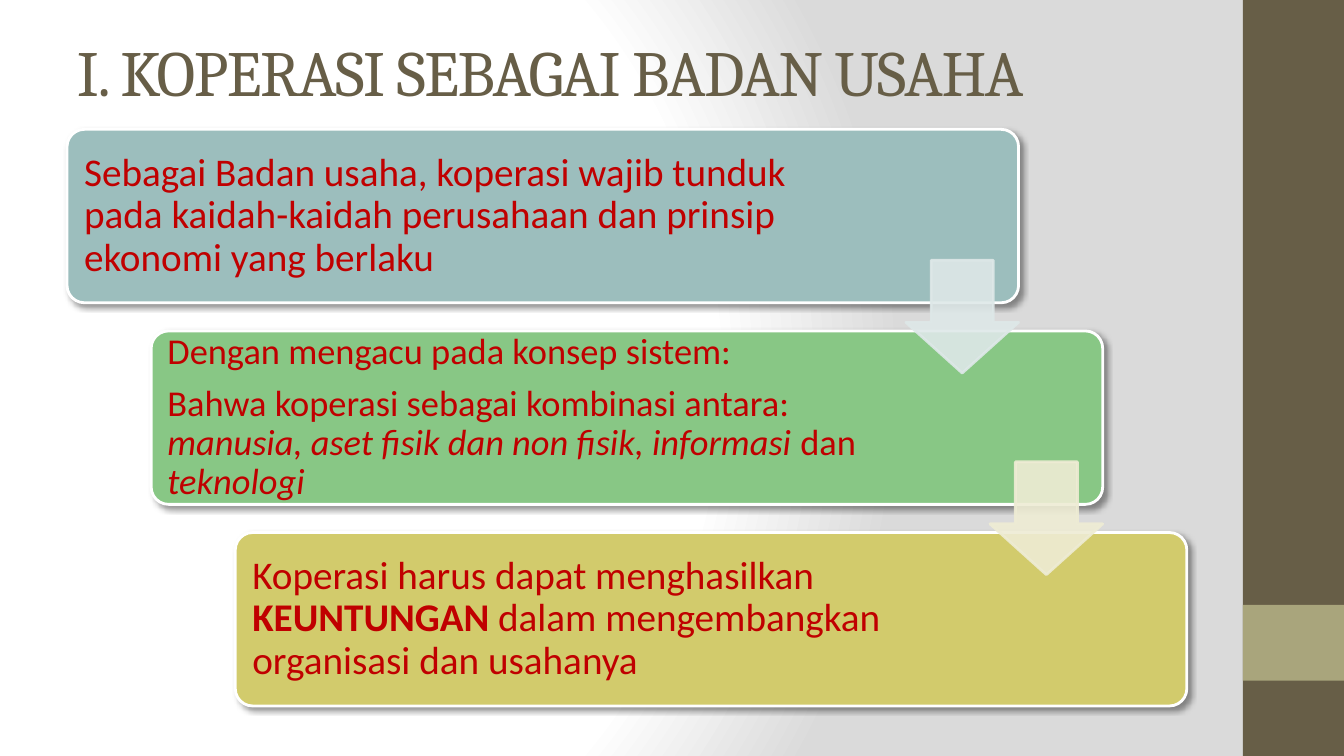
from dataclasses import dataclass

from pptx import Presentation
from pptx.dml.color import RGBColor
from pptx.enum.shapes import MSO_SHAPE as Shape
from pptx.enum.text import MSO_ANCHOR as Anchor
from pptx.enum.text import PP_ALIGN as Align
from pptx.oxml import parse_xml
from pptx.oxml.ns import nsdecls, qn
from pptx.util import Cm, Pt

SLIDE_W, SLIDE_H = 33.87, 19.05
BAR_X, BAR_W = 31.32, 2.55
CARD_X, CARD_Y, CARD_W, CARD_H = 1.69, 3.26, 23.98, 4.37
STEP_X, STEP_Y = 2.12, 5.08
TEXT_GAP = 0.13
ARROW_SIZE, ARROW_DROP = 2.84, 3.3
BROWN, KHAKI, RED, WHITE = "675E47", "A9A57C", "C00000", "FFFFFF"


@dataclass
class Run:
    text: str
    bold: bool = False
    italic: bool = False


@dataclass
class Card:
    fill: str
    size: int
    text_w: float
    inset: float
    paragraphs: list[list[Run]]


CARDS = [
    Card("9CBEBD", 28, 19.28, 0.3, [
        [Run("Sebagai Badan usaha, koperasi wajib tunduk pada kaidah-kaidah "
             "perusahaan dan prinsip ekonomi yang berlaku")],
    ]),
    Card("88C785", 26, 18.8, 0.28, [
        [Run("Dengan mengacu pada konsep sistem:")],
        [Run("Bahwa koperasi sebagai kombinasi antara: "),
         Run("manusia, aset fisik dan non fisik, informasi ", italic=True),
         Run("dan "),
         Run("teknologi", italic=True)],
    ]),
    Card("D2CB6C", 28, 18.8, 0.3, [
        [Run("Koperasi harus dapat menghasilkan "),
         Run("KEUNTUNGAN", bold=True),
         Run(" dalam mengembangkan organisasi dan usahanya")],
    ]),
]
ARROW_FILLS = ["DEE8E8", "EEECD4"]


def rgb(value: str) -> RGBColor:
    return RGBColor.from_string(value)


def add_background(s) -> None:
    s.background.fill.solid()
    bg = s.element.find(".//" + qn("p:bgPr"))
    stops = "".join(
        f'<a:gs pos="{pos}000"><a:srgbClr val="{color}"/></a:gs>'
        for pos, color in [(0, WHITE), (75, WHITE), (100, "DADADA")])
    bg.replace(bg[0], parse_xml(
        f'<a:gradFill {nsdecls("a")} rotWithShape="1"><a:gsLst>{stops}</a:gsLst>'
        '<a:path path="circle"><a:fillToRect l="20000" t="50000" r="100000" '
        'b="50000"/></a:path></a:gradFill>'))


def add_block(s, kind: Shape, x: float, y: float, w: float, h: float,
              fill: str, line: str | None = None):
    sp = s.shapes.add_shape(kind, Cm(x), Cm(y), Cm(w), Cm(h))
    sp.shadow.inherit = False
    sp.fill.solid()
    sp.fill.fore_color.rgb = rgb(fill)
    if line:
        sp.line.color.rgb = rgb(line)
        sp.line.width = Pt(2)
    else:
        sp.line.fill.background()
    return sp


def add_text(s, x: float, y: float, w: float, h: float):
    tf = s.shapes.add_textbox(Cm(x), Cm(y), Cm(w), Cm(h)).text_frame
    tf.word_wrap = True
    tf.vertical_anchor = Anchor.MIDDLE
    return tf


def style(p, name: str, size: int, color: str) -> None:
    p.alignment = Align.LEFT
    p.font.name = name
    p.font.size = Pt(size)
    p.font.color.rgb = rgb(color)


def add_title(s, text: str) -> None:
    p = add_text(s, 1.69, 0.76, 28.22, 2.03).paragraphs[0]
    style(p, "Cambria", 46, BROWN)
    r = p.add_run()
    r.text = text
    r.font._element.set("spc", "-100")


def add_card(s, index: int, card: Card) -> None:
    x, y = CARD_X + index * STEP_X, CARD_Y + index * STEP_Y
    sp = add_block(s, Shape.ROUNDED_RECTANGLE, x, y, CARD_W, CARD_H,
                   card.fill, WHITE)
    sp.adjustments[0] = 0.1
    sp.element.spPr.find(qn("a:effectLst")).append(parse_xml(
        f'<a:outerShdw {nsdecls("a")} blurRad="{Pt(4)}" dist="{Pt(3)}" '
        'dir="2700000" rotWithShape="0"><a:srgbClr val="000000">'
        '<a:alpha val="40000"/></a:srgbClr></a:outerShdw>'))
    tf = add_text(s, x + TEXT_GAP, y + TEXT_GAP, card.text_w,
                  CARD_H - 2 * TEXT_GAP)
    tf.margin_left = tf.margin_right = Cm(card.inset)
    tf.margin_top = tf.margin_bottom = Cm(card.inset)
    for i, runs in enumerate(card.paragraphs):
        p = tf.add_paragraph() if i else tf.paragraphs[0]
        style(p, "Calibri", card.size, RED)
        p.line_spacing = 0.9
        p.space_after = Pt(9)
        for run in runs:
            r = p.add_run()
            r.text = run.text
            r.font.bold = run.bold
            r.font.italic = run.italic


def add_arrow(s, index: int, color: str) -> None:
    x = CARD_X + CARD_W - ARROW_SIZE + index * STEP_X
    y = CARD_Y + ARROW_DROP + index * STEP_Y
    sp = add_block(s, Shape.DOWN_ARROW, x, y, ARROW_SIZE, ARROW_SIZE,
                   color, color)
    sp.adjustments[0] = 0.55
    sp.adjustments[1] = 0.45
    for clr in sp.element.spPr.iter(qn("a:srgbClr")):
        clr.append(parse_xml(f'<a:alpha {nsdecls("a")} val="90000"/>'))


def main() -> None:
    prs = Presentation()
    prs.slide_width, prs.slide_height = Cm(SLIDE_W), Cm(SLIDE_H)
    s = prs.slides.add_slide(prs.slide_layouts[6])
    add_background(s)
    add_block(s, Shape.RECTANGLE, BAR_X, 0, BAR_W, SLIDE_H, BROWN)
    add_block(s, Shape.RECTANGLE, BAR_X, 15.24, BAR_W, 1.91, KHAKI)
    add_title(s, "I. KOPERASI SEBAGAI BADAN USAHA")
    for i, card in enumerate(CARDS):
        add_card(s, i, card)
    for i, color in enumerate(ARROW_FILLS):
        add_arrow(s, i, color)
    prs.save("out.pptx")


if __name__ == "__main__":
    main()
